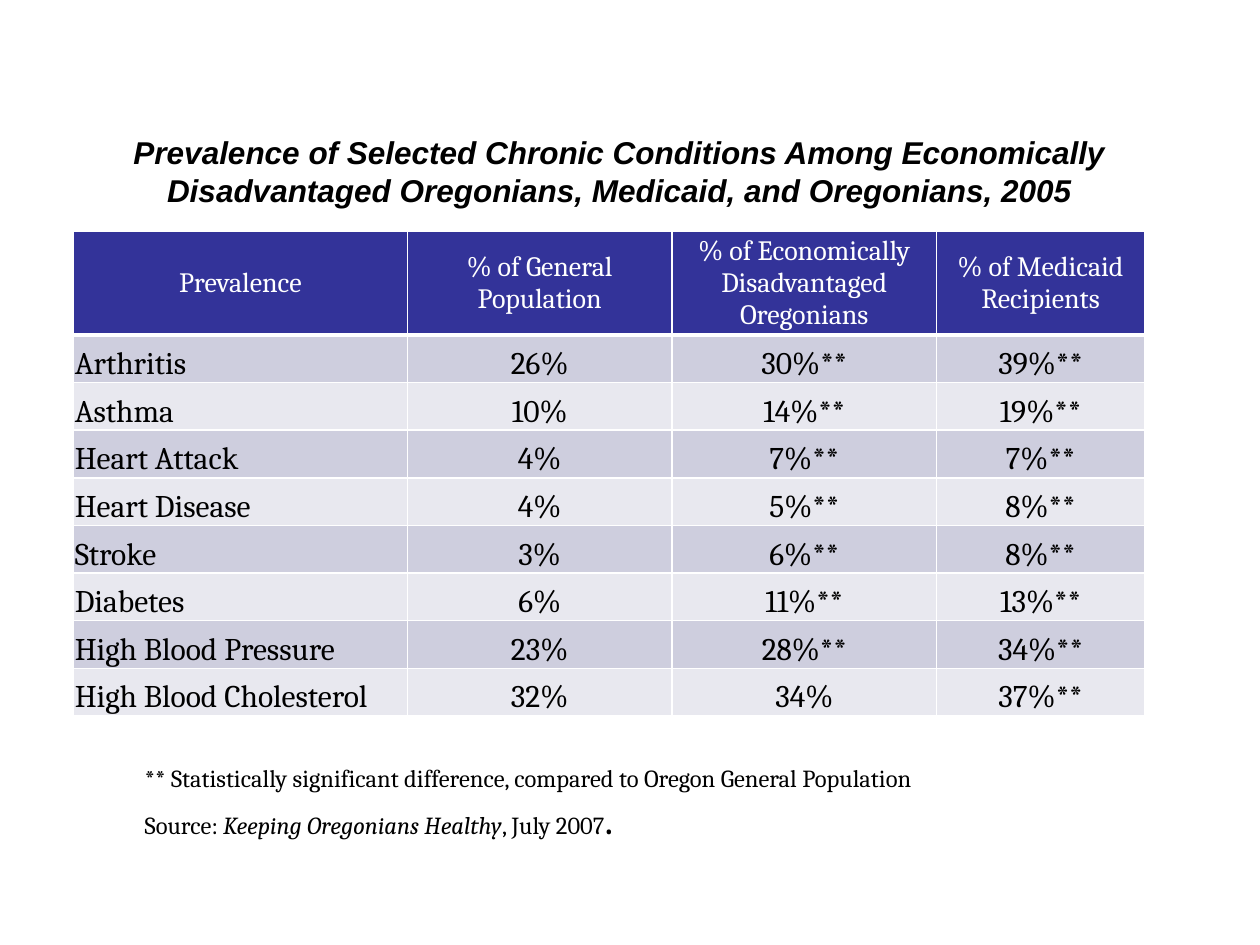
import pptx
import pptx.util
import pptx.dml.color
import pptx.enum.text
import pptx.oxml.ns
from lxml import etree

COLORS = {
    "text": "000000", "white": "FFFFFF", "header": "333399",
    "odd": "CECEDE", "even": "E8E8EF",
}
ALIGN = pptx.enum.text.PP_ALIGN
ANCHOR = pptx.enum.text.MSO_ANCHOR
HEADINGS = ["Prevalence", "% of General Population",
            "% of Economically Disadvantaged Oregonians", "% of Medicaid Recipients"]
CONDITIONS = [
    ["Arthritis", "26%", "30%**", "39%**"],
    ["Asthma", "10%", "14%**", "19%**"],
    ["Heart Attack", "4%", "7%**", "7%**"],
    ["Heart Disease", "4%", "5%**", "8%**"],
    ["Stroke", "3%", "6%**", "8%**"],
    ["Diabetes", "6%", "11%**", "13%**"],
    ["High Blood Pressure", "23%", "28%**", "34%**"],
    ["High Blood Cholesterol", "32%", "34%", "37%**"],
]


class SlideBuilder:
    """Holds the style and current slide, placing elements on a grid of 120 columns by 90 rows."""

    def __init__(self, presentation, body_font="Cambria", title_font="Arial"):
        self.body_font, self.title_font = body_font, title_font
        self.column = presentation.slide_width / 120
        self.row = presentation.slide_height / 90
        self.slide = presentation.slides.add_slide(presentation.slide_layouts[6])

    def place(self, left, top, width, height):
        return (round(left * self.column), round(top * self.row),
                round(width * self.column), round(height * self.row))

    def format_run(self, run, size, color="text", font=None, bold=False, italic=False):
        run.font.name = font or self.body_font
        run.font.size = pptx.util.Pt(size)
        run.font.bold, run.font.italic = bold, italic
        run.font.color.rgb = pptx.dml.color.RGBColor.from_string(COLORS[color])

    def text_frame(self, area, anchor):
        frame = self.slide.shapes.add_textbox(*self.place(*area)).text_frame
        frame.word_wrap = True
        frame.auto_size = pptx.enum.text.MSO_AUTO_SIZE.SHAPE_TO_FIT_TEXT
        frame.vertical_anchor = anchor
        return frame

    def title(self, text, area):
        frame = self.text_frame(area, ANCHOR.MIDDLE)
        frame.text = text
        paragraph = frame.paragraphs[0]
        paragraph.alignment = ALIGN.CENTER
        self.format_run(paragraph.runs[0], 18, font=self.title_font, bold=True, italic=True)

    def notes(self, lines, area):
        frame = self.text_frame(area, ANCHOR.TOP)
        for index, pieces in enumerate(lines):
            paragraph = frame.add_paragraph() if index else frame.paragraphs[0]
            for text, size, italic in pieces:
                run = paragraph.add_run()
                run.text = text
                self.format_run(run, size, italic=italic)

    def borders(self, cell, bottom):
        properties = cell._tc.get_or_add_tcPr()
        name = pptx.oxml.ns.qn
        for side, width in (("L", 1), ("R", 1), ("T", 1), ("B", bottom)):
            line = etree.SubElement(properties, name(f"a:ln{side}"), w=str(pptx.util.Pt(width)))
            fill = etree.SubElement(line, name("a:solidFill"))
            etree.SubElement(fill, name("a:srgbClr"), val=COLORS["white"])

    def cell(self, cell, text, fill, heading, centered):
        self.borders(cell, 3 if heading else 1)
        cell.fill.solid()
        cell.fill.fore_color.rgb = pptx.dml.color.RGBColor.from_string(COLORS[fill])
        cell.margin_left = cell.margin_right = cell.margin_top = pptx.util.Inches(0.01)
        cell.margin_bottom = 0
        cell.vertical_anchor = ANCHOR.MIDDLE if heading else ANCHOR.BOTTOM
        cell.text_frame.text = text
        paragraph = cell.text_frame.paragraphs[0]
        paragraph.alignment = ALIGN.CENTER if centered else ALIGN.LEFT
        self.format_run(paragraph.runs[0], 16 if heading else 18, "white" if heading else "text")

    def table(self, records, left, top, widths, heights):
        area = self.place(left, top, sum(widths), sum(heights))
        table = self.slide.shapes.add_table(len(records), len(widths), *area).table
        for column, width in zip(table.columns, widths):
            column.width = round(width * self.column)
        for index, (record, height) in enumerate(zip(records, heights)):
            table.rows[index].height = round(height * self.row)
            heading = index == 0
            fill = "header" if heading else ("even", "odd")[index % 2]
            for position, text in enumerate(record):
                self.cell(table.cell(index, position), text, fill, heading,
                          heading or position > 0)


def main():
    presentation = pptx.Presentation()
    presentation.slide_width = pptx.util.Inches(10)
    presentation.slide_height = pptx.util.Inches(7.5)
    builder = SlideBuilder(presentation)
    builder.title("Prevalence of Selected Chronic Conditions Among Economically "
                  "Disadvantaged Oregonians, Medicaid, and Oregonians, 2005", (9, 12, 100, 8.5))
    builder.table([HEADINGS] + CONDITIONS, 7, 22, [31.8, 25.2, 25.2, 19.8],
                  [9.9] + [4.54] * len(CONDITIONS))
    builder.notes([
        [("** Statistically significant difference, compared to Oregon General Population", 14, False)],
        [("Source: ", 14, False), ("Keeping Oregonians Healthy", 14, True),
         (", July 2007", 14, False), (".", 24, False)],
    ], (12.6, 72.1, 100, 7.7))
    presentation.save("out.pptx")


if __name__ == "__main__":
    main()
